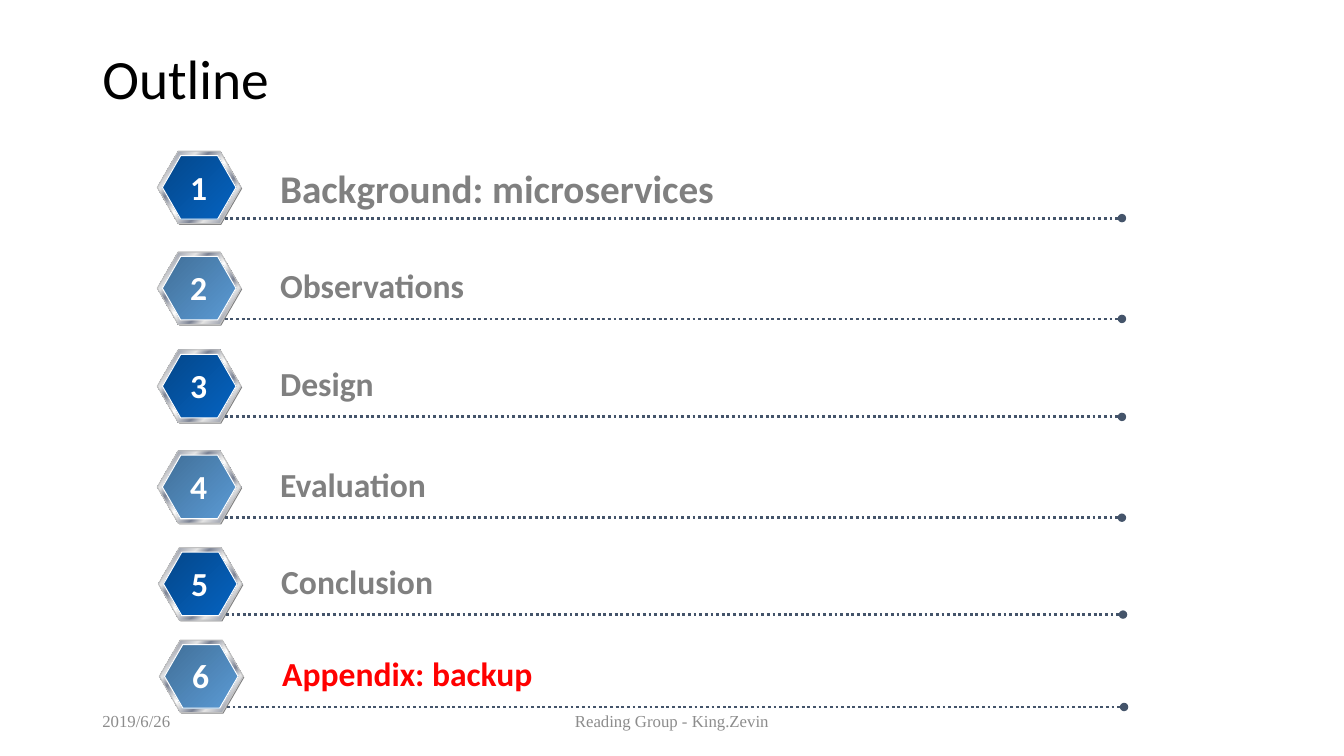
import copy

import pptx
import pptx.dml.color
import pptx.enum.dml
import pptx.enum.shapes
import pptx.enum.text
import pptx.oxml
import pptx.oxml.ns
import pptx.util

Pt = pptx.util.Pt
RGB = pptx.dml.color.RGBColor
ALIGN = pptx.enum.text.PP_ALIGN
ANCHOR = pptx.enum.text.MSO_ANCHOR
FIT = pptx.enum.text.MSO_AUTO_SIZE
qn = pptx.oxml.ns.qn
A_NS = pptx.oxml.ns.nsdecls("a")

BLACK = RGB(0x00, 0x00, 0x00)
WHITE = RGB(0xFF, 0xFF, 0xFF)
GRAY = RGB(0x80, 0x80, 0x80)
RED = RGB(0xFF, 0x00, 0x00)
FOOTER_GRAY = RGB(0x8C, 0x8C, 0x8C)
SLATE = RGB(0x44, 0x54, 0x6A)
RIM = RGB(0xC0, 0xC0, 0xC0)
SILVER = RGB(0xE6, 0xE6, 0xE6)
STEEL = RGB(0x7D, 0x84, 0x96)

METAL = [(0, SILVER), (0.07, STEEL), (0.26, SILVER), (0.34, STEEL),
         (0.46, SILVER), (0.5, WHITE), (0.54, SILVER), (0.66, STEEL),
         (0.74, SILVER), (0.93, STEEL), (1, SILVER)]
DEEP_BLUE = [(0, RGB(0x04, 0x47, 0x8A)), (1, RGB(0x05, 0x63, 0xC1))]
LIGHT_BLUE = [(0, RGB(0x41, 0x6F, 0x98)), (1, RGB(0x5B, 0x9B, 0xD5))]

# label, label width, size, colour, left shift, top
ROWS = [
    ("Background: microservices", 368, 28, GRAY, 0, 108),
    ("Observations", 165.6, 24, GRAY, 0, 180),
    ("Design", 91.4, 24, GRAY, 0, 250),
    ("Evaluation", 134, 24, GRAY, 0, 322),
    ("Conclusion", 139.7, 24, GRAY, 0.8, 391.2),
    ("Appendix: backup", 215.3, 24, RED, 1.5, 457.2),
]


class Deck:
    def __init__(self):
        self.font = "Calibri"
        self.prs = pptx.Presentation()
        self.prs.slide_width, self.prs.slide_height = Pt(960), Pt(540)
        self.s = self.prs.slides.add_slide(self.prs.slide_layouts[5])

    def style(self, p, size, color, bold=False, font=None, align=ALIGN.LEFT):
        p.alignment = align
        for r in p.runs:
            r.font.name = font or self.font
            r.font.size = Pt(size)
            r.font.bold = bold
            r.font.color.rgb = color

    def title(self, text):
        sp = self.s.shapes.title
        sp.left, sp.top, sp.width, sp.height = Pt(66), Pt(31), Pt(828), Pt(54)
        tf = sp.text_frame
        tf.text = text
        tf.auto_size = FIT.NONE
        tf.vertical_anchor = ANCHOR.MIDDLE
        tf.paragraphs[0].line_spacing = 0.9
        self.style(tf.paragraphs[0], 39.6, BLACK)

    def label(self, text, x, y, w, h, size, color, align=ALIGN.LEFT):
        """Bold one-line text in a box that fits it."""
        tf = self.s.shapes.add_textbox(Pt(x), Pt(y), Pt(w), Pt(h)).text_frame
        tf.text = text
        tf.word_wrap = False
        tf.auto_size = FIT.SHAPE_TO_FIT_TEXT
        self.style(tf.paragraphs[0], size, color, True, align=align)

    def footer(self, text, x, w, align):
        tf = self.s.shapes.add_textbox(Pt(x), Pt(500.5), Pt(w), Pt(28.8)).text_frame
        tf.text = text
        tf.word_wrap = True
        tf.vertical_anchor = ANCHOR.MIDDLE
        self.style(tf.paragraphs[0], 12, FOOTER_GRAY, font="Times New Roman", align=align)

    def gradient(self, sp, stops):
        """Fill from top left to bottom right with any number of stops."""
        sp.fill.gradient()
        sp.fill.gradient_angle = 315
        gs_list = sp._element.spPr.find(".//" + qn("a:gsLst"))
        for _ in stops[len(gs_list):]:
            gs_list.append(copy.deepcopy(gs_list[0]))
        for stop, (position, color) in zip(sp.fill.gradient_stops, stops):
            stop.position = position
            stop.color.rgb = color

    def hexagon(self, group, x, y, w, h, fill, line=None):
        sp = group.shapes.add_shape(pptx.enum.shapes.MSO_SHAPE.HEXAGON,
                                    Pt(x), Pt(y), Pt(w), Pt(h))
        sp.shadow.inherit = False
        sp.adjustments[0] = 0.289
        if isinstance(fill, list):
            self.gradient(sp, fill)
        else:
            sp.fill.solid()
            sp.fill.fore_color.rgb = fill
        if line is None:
            sp.line.fill.background()
        else:
            sp.line.color.rgb = line
            sp.line.width = Pt(0.75)

    def badge(self, x, y, face):
        group = self.s.shapes.add_group_shape()
        self.hexagon(group, x + 0.8, y + 0.8, 59.8, 51.8, GRAY)
        self.hexagon(group, x, y, 59.8, 51.8, METAL, RIM)
        self.hexagon(group, x + 3.6, y + 3.2, 52.6, 45.4, face, WHITE)

    def dotted_line(self, x1, x2, y):
        """Horizontal dotted rule with a round right end."""
        c = self.s.shapes.add_connector(pptx.enum.shapes.MSO_CONNECTOR.STRAIGHT,
                                        Pt(x1), Pt(y), Pt(x2), Pt(y))
        c.line.color.rgb = SLATE
        c.line.width = Pt(2)
        c.line.dash_style = pptx.enum.dml.MSO_LINE.ROUND_DOT
        spPr = c._element.spPr
        spPr.find(qn("a:ln")).append(
            pptx.oxml.parse_xml(f'<a:tailEnd {A_NS} type="oval"/>'))
        spPr.append(pptx.oxml.parse_xml(f"<a:effectLst {A_NS}/>"))


def main():
    deck = Deck()
    deck.title("Outline")
    for i, (text, width, size, color, shift, top) in enumerate(ROWS):
        deck.badge(112.4 + shift, top, LIGHT_BLUE if i % 2 else DEEP_BLUE)
        deck.dotted_line(160.6 + shift, 801.4 + shift, top + 47.8)
        deck.label(text, 193 + shift, top + 5.8, width, size * 1.22 + 7.2, size, color)
        deck.label(str(i + 1), 127.8 + shift, top + 7.4, 28, 36.4, 24, WHITE, ALIGN.CENTER)
    deck.footer("2019/6/26", 66, 216, ALIGN.LEFT)
    deck.footer("Reading Group - King.Zevin", 318, 324, ALIGN.CENTER)
    deck.prs.save("out.pptx")


if __name__ == "__main__":
    main()
